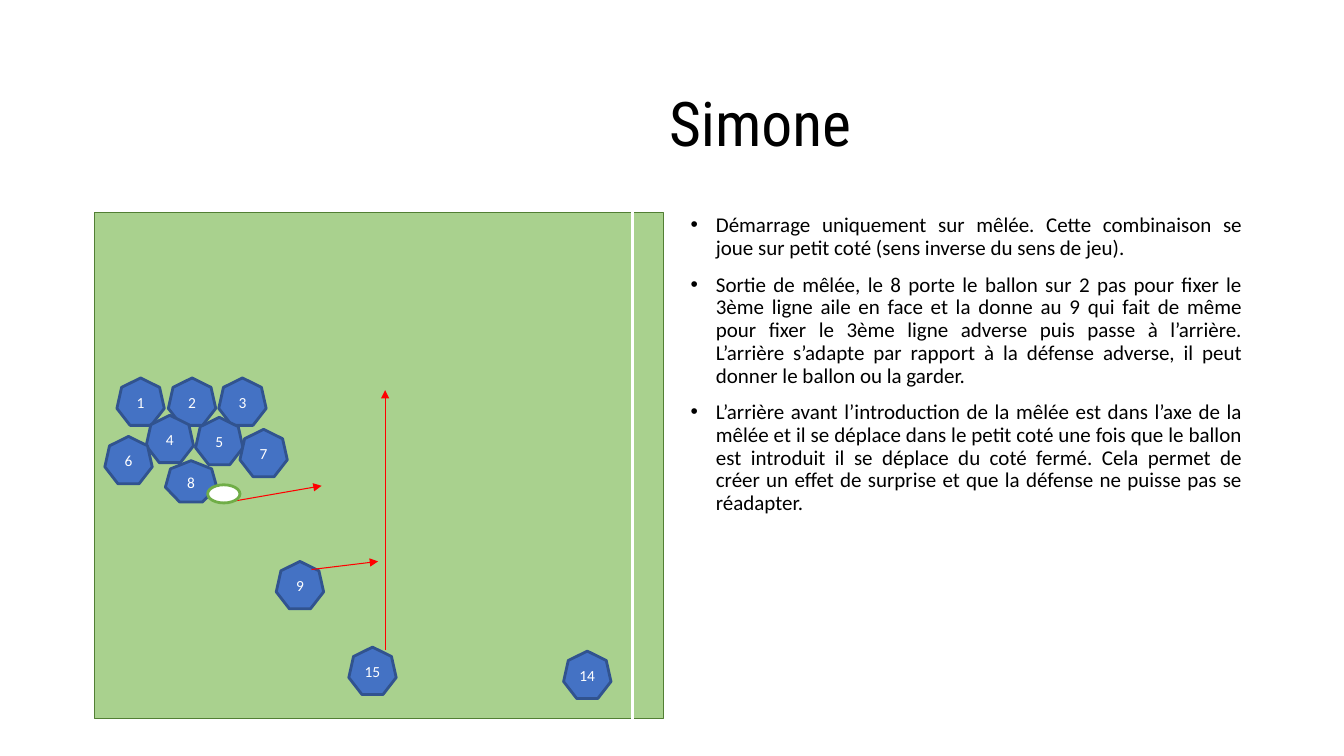
from pptx import Presentation
from pptx.dml.color import RGBColor
from pptx.enum import shapes, text
from pptx.oxml import parse_xml
from pptx.oxml.ns import nsdecls
from pptx.util import Inches, Pt

COLORS = {
    "ink": "000000", "white": "FFFFFF", "grass": "A9D18E", "edge": "527F34",
    "player": "4472C4", "rim": "31538F", "run": "FF0000", "ball": "70AD47",
}

SIDE = 0.47
PLAYERS = [
    ("1", 1.16, 3.75), ("2", 1.67, 3.75), ("3", 2.17, 3.75),
    ("4", 1.45, 4.12), ("5", 1.94, 4.14), ("6", 1.04, 4.33),
    ("8", 1.64, 4.57, 0.51, 0.41), ("7", 2.38, 4.26),
    ("9", 2.74, 5.57), ("14", 5.59, 6.46), ("15", 3.46, 6.42),
]
RUNS = [
    (2.27, 4.98, 3.19, 4.82),
    (3.09, 5.65, 3.75, 5.57),
    (3.82, 6.45, 3.82, 3.87),
]
NOTES = [
    "Démarrage uniquement sur mêlée. Cette combinaison se joue sur petit coté "
    "(sens inverse du sens de jeu).",
    "Sortie de mêlée, le 8 porte le ballon sur 2 pas pour fixer le 3ème ligne "
    "aile en face et la donne au 9 qui fait de même pour fixer le 3ème ligne "
    "adverse puis passe à l’arrière. L’arrière s’adapte par rapport à la "
    "défense adverse, il peut donner le ballon ou la garder.",
    "L’arrière avant l’introduction de la mêlée est dans l’axe de la mêlée et "
    "il se déplace dans le petit coté une fois que le ballon est introduit il "
    "se déplace du coté fermé. Cela permet de créer un effet de surprise et "
    "que la défense ne puisse pas se réadapter.",
]


def color(name):
    return RGBColor.from_string(COLORS[name])


def place(item, x, y, w, h):
    item.left, item.top = Inches(x), Inches(y)
    item.width, item.height = Inches(w), Inches(h)


def add_run(par, words, size, font, ink):
    run = par.add_run()
    run.text = words
    run.font.size = Pt(size)
    run.font.name = font
    run.font.color.rgb = color(ink)


def add_title(slide, words):
    title = slide.shapes.title
    place(title, 1.79, 0.48, 11.5, 1.45)
    frame = title.text_frame
    frame.auto_size = text.MSO_AUTO_SIZE.NONE
    frame.vertical_anchor = text.MSO_ANCHOR.MIDDLE
    par = frame.paragraphs[0]
    par.alignment = text.PP_ALIGN.CENTER
    add_run(par, words, 44, "Roboto Condensed", "ink")


def add_list(slide, items):
    body = slide.placeholders[1]
    place(body, 6.75, 2.08, 5.67, 5.02)
    frame = body.text_frame
    frame.auto_size = text.MSO_AUTO_SIZE.NONE
    for i, words in enumerate(items):
        par = frame.add_paragraph() if i else frame.paragraphs[0]
        par.alignment = text.PP_ALIGN.JUSTIFY
        par.line_spacing = 0.9
        par.space_before = Pt(10 if i else 0)
        props = par._p.get_or_add_pPr()
        props.set("marL", str(Inches(0.25)))
        props.set("indent", str(Inches(-0.25)))
        add_run(par, words, 15, "Calibri", "ink")


def add_form(slide, kind, box, fill, line, width):
    form = slide.shapes.add_shape(kind, *map(Inches, box))
    form.shadow.inherit = False
    form.fill.solid()
    form.fill.fore_color.rgb = color(fill)
    form.line.color.rgb = color(line)
    form.line.width = Pt(width)
    return form


def add_player(slide, number, x, y, w=SIDE, h=SIDE):
    form = add_form(slide, shapes.MSO_SHAPE.HEPTAGON, (x, y, w, h),
                    "player", "rim", 2)
    frame = form.text_frame
    frame.word_wrap = False
    frame.vertical_anchor = text.MSO_ANCHOR.MIDDLE
    par = frame.paragraphs[0]
    par.alignment = text.PP_ALIGN.CENTER
    par.line_spacing = 1.07
    add_run(par, number, 11, "Calibri", "white")


def add_line(slide, ends, ink, width, arrow=False):
    line = slide.shapes.add_connector(
        shapes.MSO_CONNECTOR.STRAIGHT, *map(Inches, ends))
    line.line.color.rgb = color(ink)
    line.line.width = Pt(width)
    if arrow:
        line.line._get_or_add_ln().append(
            parse_xml(f'<a:tailEnd {nsdecls("a")} type="triangle"/>'))
    line._element.spPr.append(parse_xml(f'<a:effectLst {nsdecls("a")}/>'))


def main():
    prs = Presentation()
    prs.slide_width, prs.slide_height = Inches(13.33), Inches(7.5)
    slide = prs.slides.add_slide(prs.slide_layouts[1])
    add_title(slide, "Simone")
    add_list(slide, NOTES)
    add_form(slide, shapes.MSO_SHAPE.RECTANGLE, (0.94, 2.11, 5.64, 5.02),
             "grass", "edge", 1)
    for player in PLAYERS:
        add_player(slide, *player)
    add_line(slide, (6.27, 1.45, 6.27, 7.18), "white", 2.25)
    for ends in RUNS:
        add_line(slide, ends, "run", 0.75, arrow=True)
    add_form(slide, shapes.MSO_SHAPE.OVAL, (2.06, 4.81, 0.32, 0.18),
             "white", "ball", 2)
    prs.save("out.pptx")


if __name__ == "__main__":
    main()
